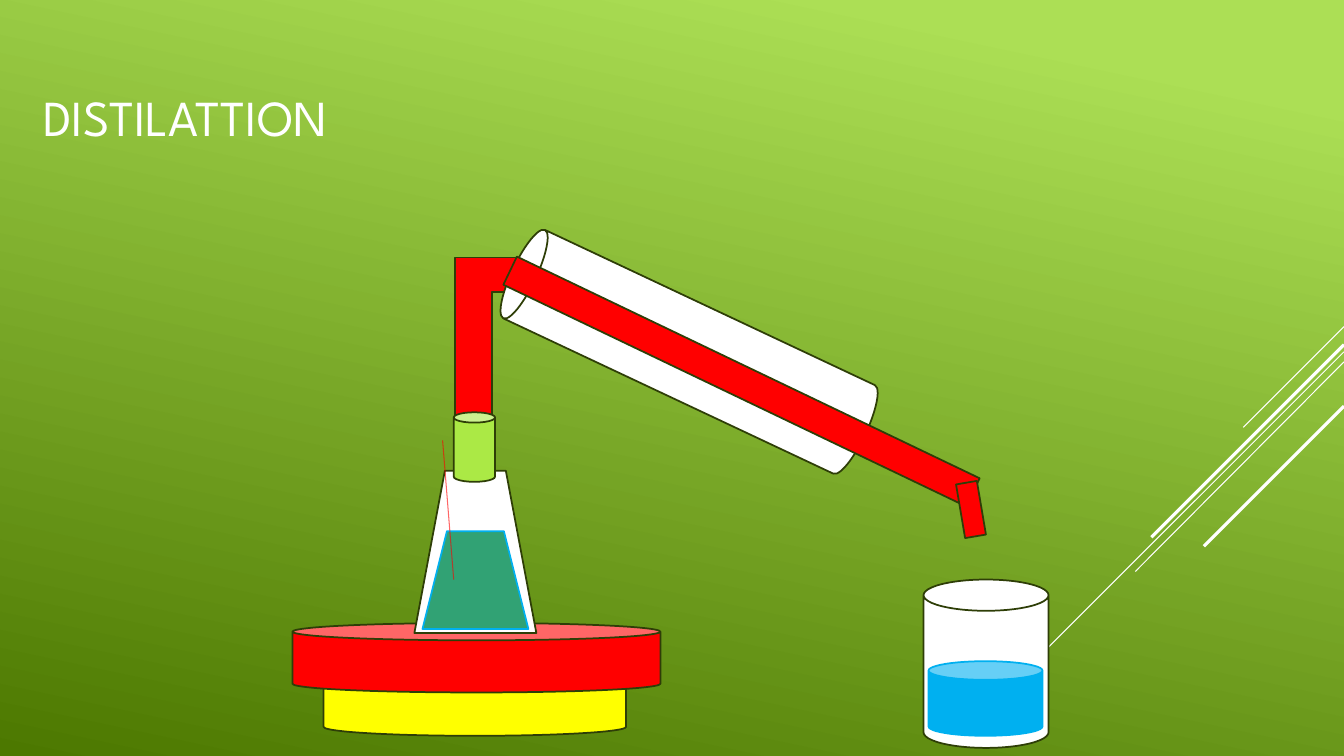
from lxml import etree
from pptx import Presentation
from pptx.dml.color import RGBColor
from pptx.enum import shapes, text
from pptx.oxml import ns
from pptx.util import Inches, Pt

WHITE = RGBColor(0xFF, 0xFF, 0xFF)
LIGHT = RGBColor(0xAC, 0xDF, 0x55)
DARK = RGBColor(0x4C, 0x78, 0x00)
EDGE = RGBColor(0x2E, 0x3E, 0x07)
RED = RGBColor(0xFF, 0x00, 0x00)
YELLOW = RGBColor(0xFF, 0xFF, 0x00)
LIME = RGBColor(0xAB, 0xE9, 0x45)
TEAL = RGBColor(0x31, 0xA2, 0x74)
BLUE = RGBColor(0x00, 0xB0, 0xF0)
KIND = shapes.MSO_SHAPE

deck = Presentation()
deck.slide_width, deck.slide_height = Inches(13.33), Inches(7.5)
slide = deck.slides.add_slide(deck.slide_layouts[6])


def add_line(x1, y1, x2, y2, color, width):
    line = slide.shapes.add_connector(
        shapes.MSO_CONNECTOR.STRAIGHT,
        Inches(x1), Inches(y1), Inches(x2), Inches(y2))
    line.line.color.rgb = color
    line.line.width = Pt(width)
    etree.SubElement(line._element.spPr, ns.qn("a:effectLst"))
    return line


def add_part(kind, x, y, w, h, fill, edge=EDGE, turn=0):
    part = slide.shapes.add_shape(kind, Inches(x), Inches(y), Inches(w), Inches(h))
    part.shadow.inherit = False
    part.rotation = turn
    part.fill.solid()
    part.fill.fore_color.rgb = fill
    part.line.color.rgb = edge
    part.line.width = Pt(1.25)
    return part


# Background gradient
back = slide.background.fill
back.gradient()
back.gradient_angle = 258
for stop, place, color in zip(back.gradient_stops, (0.1, 1), (LIGHT, DARK)):
    stop.position = place
    stop.color.rgb = color

# Diagonal lines running in from the right edge
for top, end, low, width in [
    (3.24, 12.33, 4.24, 0.75),
    (3.49, 10.07, 6.75, 0.75),
    (3.59, 11.26, 5.67, 0.75),
    (3.42, 11.42, 5.33, 2.25),
    (4.03, 11.94, 5.42, 2.25),
]:
    add_line(13.33, top, end, low, WHITE, width)

# Bent pipe above the flask
bend = add_part(KIND.CORNER, 4.08, 2.99, 1.6, 0.73, RED, turn=90)
bend.adjustments[0] = 0.5
bend.adjustments[1] = 0.47

# Title
title = slide.shapes.add_textbox(Inches(0.33), Inches(0.33), Inches(9.33), Inches(1.65))
frame = title.text_frame
frame.word_wrap = True
frame.vertical_anchor = text.MSO_ANCHOR.MIDDLE
frame.text = "DISTILATTION"
font = frame.paragraphs[0].runs[0].font
font.name, font.size = "League Spartan", Pt(36)
font.color.rgb = WHITE

# Heater, flask and stopper
add_part(KIND.CAN, 3.21, 6.59, 3, 0.71, YELLOW)
add_part(KIND.CAN, 2.9, 6.18, 3.65, 0.69, RED)
add_part(KIND.TRAPEZOID, 4.11, 4.67, 1.21, 1.61, WHITE)
add_part(KIND.CAN, 4.5, 4.09, 0.41, 0.69, LIME)
add_part(KIND.TRAPEZOID, 4.19, 5.27, 1.05, 0.97, TEAL, BLUE)

# Condenser with its inner tube and spout
add_part(KIND.CAN, 6.35, 1.56, 0.97, 3.86, WHITE, turn=295.2)
add_part(KIND.RECTANGLE, 4.81, 3.63, 5.09, 0.31, RED, turn=25.6)
add_part(KIND.RECTANGLE, 9.36, 4.95, 0.54, 0.21, RED, turn=80.4)

# Beaker and collected water
add_part(KIND.CAN, 9.16, 5.75, 1.24, 1.67, WHITE)
add_part(KIND.CAN, 9.21, 6.56, 1.13, 0.74, BLUE, BLUE)

# Thin translucent line on the flask
probe = add_line(4.39, 4.37, 4.5, 5.75, RED, 0.75)
tint = probe._element.spPr.find(".//" + ns.qn("a:srgbClr"))
etree.SubElement(tint, ns.qn("a:alpha"), val="60000")

deck.save("out.pptx")
